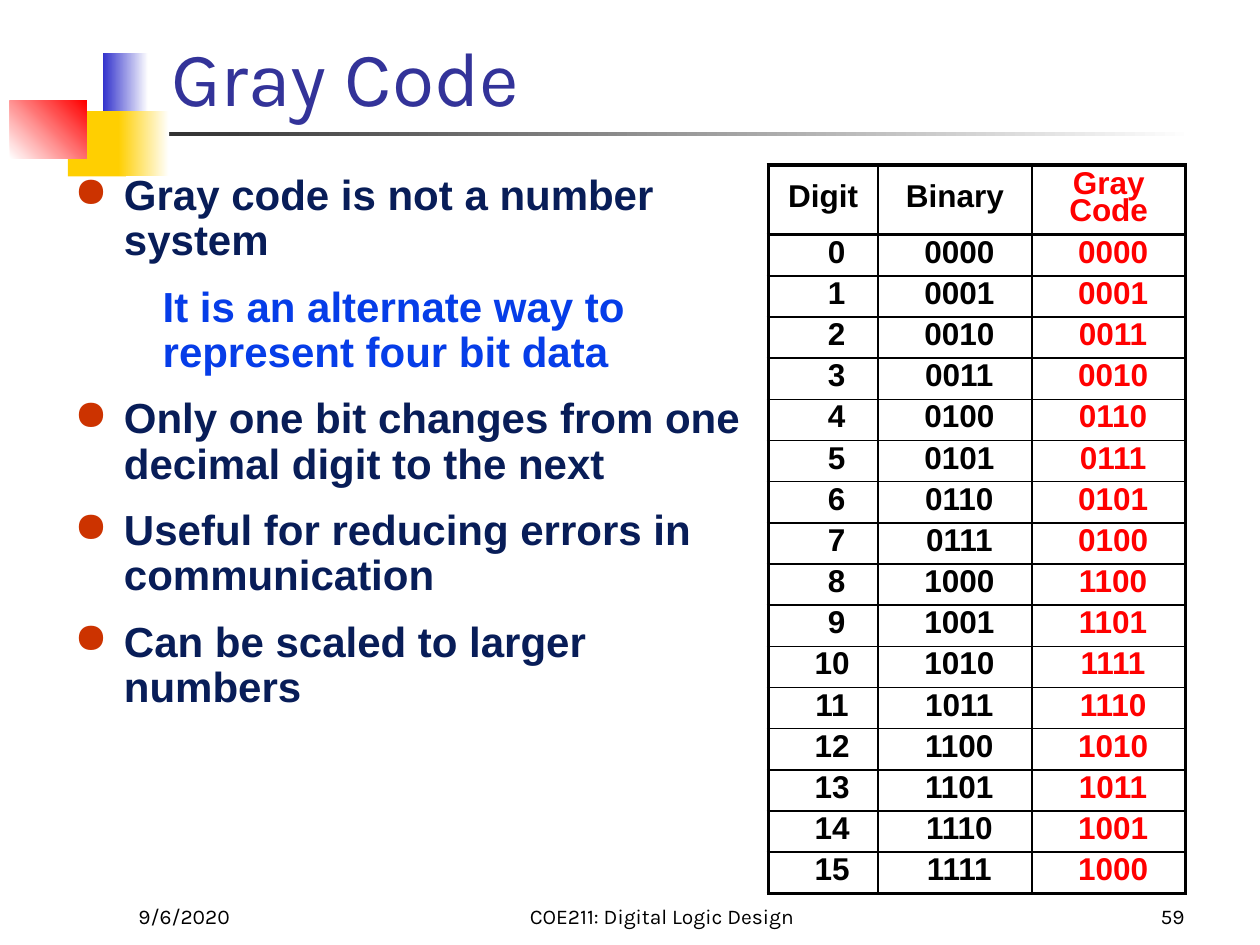
"""Build the Gray Code slide with its bullet list and code table."""
from lxml import etree
from pptx import Presentation
from pptx import util as u
from pptx.dml.color import RGBColor
from pptx.enum import shapes, text
from pptx.oxml import ns

BLACK = RGBColor(0x00, 0x00, 0x00)
WHITE = RGBColor(0xFF, 0xFF, 0xFF)
CHARCOAL = RGBColor(0x1C, 0x1C, 0x1C)
BLUE = RGBColor(0x33, 0x33, 0xCC)
YELLOW = RGBColor(0xFF, 0xCF, 0x01)
RED = RGBColor(0xFF, 0x00, 0x00)
TITLE = RGBColor(0x33, 0x33, 0x99)
NAVY = RGBColor(0x08, 0x1D, 0x58)
BRIGHT = RGBColor(0x06, 0x3D, 0xE8)
BULLET = RGBColor(0xCC, 0x33, 0x00)


def add_run(p, words, size, font, color, bold=False):
    r = p.add_run()
    r.text = words
    r.font.size = u.Pt(size)
    r.font.name = font
    r.font.bold = bold
    r.font.color.rgb = color


def add_solid(parent, color):
    fill = etree.SubElement(parent, ns.qn("a:solidFill"))
    etree.SubElement(fill, ns.qn("a:srgbClr"), val=str(color))


prs = Presentation()
prs.slide_width, prs.slide_height = u.Cm(25.4), u.Cm(19.05)
s = prs.slides.add_slide(prs.slide_layouts[6])

blocks = [
    (1.22, 2.67, 22.86, 0.08, CHARCOAL, WHITE, 0),
    (2.08, 1.07, 0.91, 1.32, BLUE, WHITE, 0),
    (1.37, 2.24, 1.17, 1.32, YELLOW, None, 0),
    (2.39, 2.24, 1.02, 1.32, YELLOW, WHITE, 0),
    (0.2, 2.03, 1.55, 1.17, WHITE, RED, 45),
]
for x, y, w, h, start, end, angle in blocks:
    sp = s.shapes.add_shape(shapes.MSO_SHAPE.RECTANGLE, u.Cm(x), u.Cm(y), u.Cm(w), u.Cm(h))
    sp.shadow.inherit = False
    sp.line.fill.background()
    if end is None:
        sp.fill.solid()
        sp.fill.fore_color.rgb = start
    else:
        sp.fill.gradient()
        sp.fill.gradient_angle = angle
        for stop, color in zip(sp.fill.gradient_stops, (start, end)):
            stop.color.rgb = color

labels = [
    ("Gray Code", 3.2, 0.2, 21.64, 2.39, 44, TITLE, text.PP_ALIGN.LEFT),
    ("9/6/2020", 2.54, 17.58, 5.28, 1.27, 12, BLACK, text.PP_ALIGN.LEFT),
    ("COE211: Digital Logic Design", 9.32, 17.58, 8.05, 1.27, 12, BLACK, text.PP_ALIGN.CENTER),
    ("59", 18.85, 17.58, 5.28, 1.27, 12, BLACK, text.PP_ALIGN.RIGHT),
]
for words, x, y, w, h, size, color, align in labels:
    tf = s.shapes.add_textbox(u.Cm(x), u.Cm(y), u.Cm(w), u.Cm(h)).text_frame
    tf.word_wrap = True
    tf.vertical_anchor = text.MSO_ANCHOR.BOTTOM
    p = tf.paragraphs[0]
    p.alignment = align
    add_run(p, words, size, "Karla", color)

points = [
    ("Gray code is not a number system", 0),
    ("It is an alternate way to represent four bit data", 1),
    ("Only one bit changes from one decimal digit to the next", 0),
    ("Useful for reducing errors in communication", 0),
    ("Can be scaled to larger numbers", 0),
]
tf = s.shapes.add_textbox(u.Cm(1.5), u.Cm(3.51), u.Cm(13.51), u.Cm(11.15)).text_frame
tf.word_wrap = True
tf.margin_left = tf.margin_top = tf.margin_right = tf.margin_bottom = 0
for i, (words, level) in enumerate(points):
    p = tf.paragraphs[0] if i == 0 else tf.add_paragraph()
    pPr = p._p.get_or_add_pPr()
    if level:
        pPr.set("marL", str(u.Cm(1.78)))
        pPr.set("indent", "0")
        etree.SubElement(pPr, ns.qn("a:buNone"))
    else:
        pPr.set("marL", str(u.Cm(1)))
        pPr.set("indent", str(-u.Cm(1)))
        buClr = etree.SubElement(pPr, ns.qn("a:buClr"))
        etree.SubElement(buClr, ns.qn("a:srgbClr"), val=str(BULLET))
        etree.SubElement(pPr, ns.qn("a:buChar"), char="●")
    p.level = level
    p.line_spacing = 0.9
    p.space_before = u.Pt(12 if i else 0)
    add_run(p, words, 24, "Arial", BRIGHT if level else NAVY, True)

rows = [("Digit", "Binary", "Gray Code")]
rows += [(str(n), f"{n:04b}", f"{n ^ n >> 1:04b}") for n in range(16)]
widths = [2.21, 3.1, 3.1]
heights = [1.4] + [0.83] * 16
frame = s.shapes.add_table(len(rows), len(widths), u.Cm(15.49), u.Cm(3.33),
                           u.Cm(sum(widths)), u.Cm(sum(heights)))
table = frame.table
table.first_row = table.horz_banding = False
for column, width in zip(table.columns, widths):
    column.width = u.Cm(width)
for row, height in zip(table.rows, heights):
    row.height = u.Cm(height)

for i, row in enumerate(rows):
    for j, words in enumerate(row):
        cell = table.cell(i, j)
        cell.vertical_anchor = text.MSO_ANCHOR.MIDDLE
        cell.fill.background()
        if i:
            shift = 4 - len(words) if j == 0 else 1
            cell.margin_left = u.Cm(0.25 + 0.18 * shift)
        p = cell.text_frame.paragraphs[0]
        p.alignment = text.PP_ALIGN.CENTER
        p.line_spacing = 0.75
        add_run(p, words, 18, "Arial", RED if j == 2 else BLACK, True)
        thick = {"L": j == 0, "R": j == 2, "T": i < 2, "B": i in (0, 16)}
        tcPr = cell._tc.get_or_add_tcPr()
        for k, (side, heavy) in enumerate(thick.items()):
            ln = etree.Element(ns.qn(f"a:ln{side}"), w=str(u.Pt(2.25 if heavy else 1)))
            add_solid(ln, BLACK)
            tcPr.insert(k, ln)

prs.save("out.pptx")
